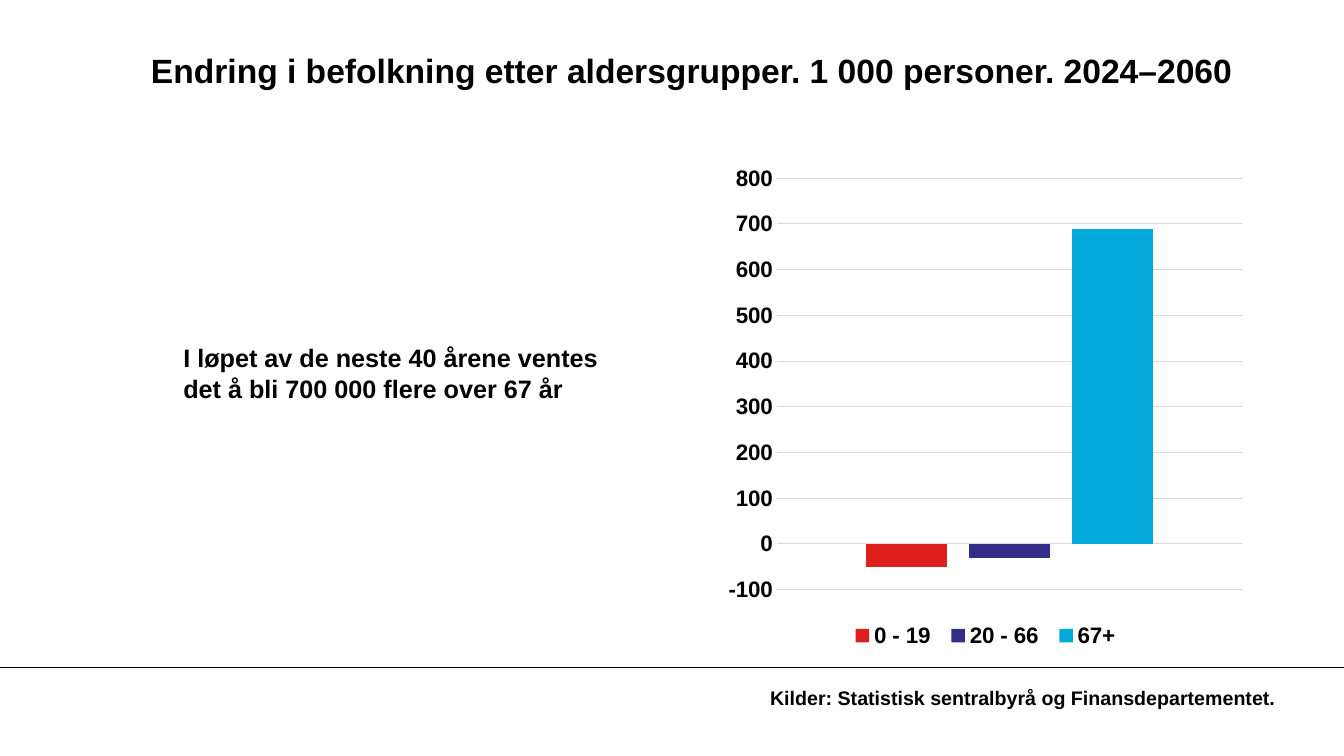
from dataclasses import dataclass

from lxml import etree
from pptx import Presentation, util as u
from pptx.chart.data import CategoryChartData
from pptx.dml.color import RGBColor
from pptx.enum import chart as ch, shapes, text
from pptx.oxml import ns


@dataclass(frozen=True)
class Theme:
    font: str = "Arial"
    ink: RGBColor = RGBColor.from_string("000000")
    grid: RGBColor = RGBColor.from_string("D9D9D9")
    title: int = 24
    body: int = 18
    axis: int = 16
    source: int = 14
    hairline: float = 0.75


theme = Theme()
prs = Presentation()
prs.slide_width, prs.slide_height = u.Inches(13.33), u.Inches(7.5)


def share(*percents):
    sides = (prs.slide_width, prs.slide_height) * 2
    return [int(side * pct / 100) for side, pct in zip(sides, percents)]


def write(sp, words, size, anchor, align=text.PP_ALIGN.LEFT, spacing=None, inset=(0.1, 0.05)):
    tf = sp.text_frame
    tf.word_wrap = True
    tf.auto_size = text.MSO_AUTO_SIZE.NONE
    tf.vertical_anchor = anchor
    tf.margin_left = tf.margin_right = u.Inches(inset[0])
    tf.margin_top = tf.margin_bottom = u.Inches(inset[1])
    p = tf.paragraphs[0]
    p.alignment = align
    p.line_spacing = spacing
    r = p.add_run()
    r.text = words
    r.font.name, r.font.size, r.font.bold = theme.font, u.Pt(size), True
    r.font.color.rgb = theme.ink


s = prs.slides.add_slide(prs.slide_layouts[5])

rule_x, rule_y = share(100, 88.27)
rule = s.shapes.add_connector(shapes.MSO_CONNECTOR.STRAIGHT, 0, rule_y, rule_x, rule_y)
rule.line.color.rgb = theme.ink
rule.line.width = u.Pt(theme.hairline)
etree.SubElement(rule._element.spPr, ns.qn("a:effectLst"))

title = s.shapes.title
title.left, title.top, title.width, title.height = share(9.83, 4.27, 83.27, 10)
write(title, "Endring i befolkning etter aldersgrupper. 1 000 personer. 2024–2060",
      theme.title, text.MSO_ANCHOR.MIDDLE, align=text.PP_ALIGN.CENTER, inset=(0, 0))

source = s.shapes.add_textbox(*share(56.56, 89.6, 39.68, 4.67))
write(source, "Kilder: Statistisk sentralbyrå og Finansdepartementet.",
      theme.source, text.MSO_ANCHOR.TOP, spacing=1.15)

message = s.shapes.add_textbox(*share(12.9, 40.53, 33.76, 13.47))
write(message, "I løpet av de neste 40 årene ventes det å bli 700 000 flere over 67 år",
      theme.body, text.MSO_ANCHOR.BOTTOM)

age_groups = [
    ("0 - 19 ", -50, "DF1F1D"),
    ("20 - 66 ", -30, "342C86"),
    ("67+", 690, "00A9DA"),
]
data = CategoryChartData()
data.categories = ["1"]
for name, change, _ in age_groups:
    data.add_series(name, [change])

chart = s.shapes.add_chart(ch.XL_CHART_TYPE.COLUMN_CLUSTERED,
                           *share(53.41, 20.67, 39.83, 65.6), data).chart
chart.has_title = False
chart.font.name, chart.font.size, chart.font.bold = theme.font, u.Pt(theme.axis), True
chart.font.color.rgb = theme.ink
chart.has_legend = True
chart.legend.position = ch.XL_LEGEND_POSITION.BOTTOM
chart.legend.include_in_layout = False
chart.category_axis.visible = False

axis = chart.value_axis
axis.minimum_scale, axis.maximum_scale, axis.major_unit = -100, 800, 100
axis.major_tick_mark = axis.minor_tick_mark = ch.XL_TICK_MARK.NONE
axis.format.line.fill.background()
axis.major_gridlines.format.line.color.rgb = theme.grid
axis.major_gridlines.format.line.width = u.Pt(theme.hairline)

plot = chart.plots[0]
plot.gap_width, plot.overlap, plot.vary_by_categories = 219, -27, False
for series, (_, _, colour) in zip(plot.series, age_groups):
    series.invert_if_negative = False
    series.format.fill.solid()
    series.format.fill.fore_color.rgb = RGBColor.from_string(colour)

prs.save("out.pptx")
